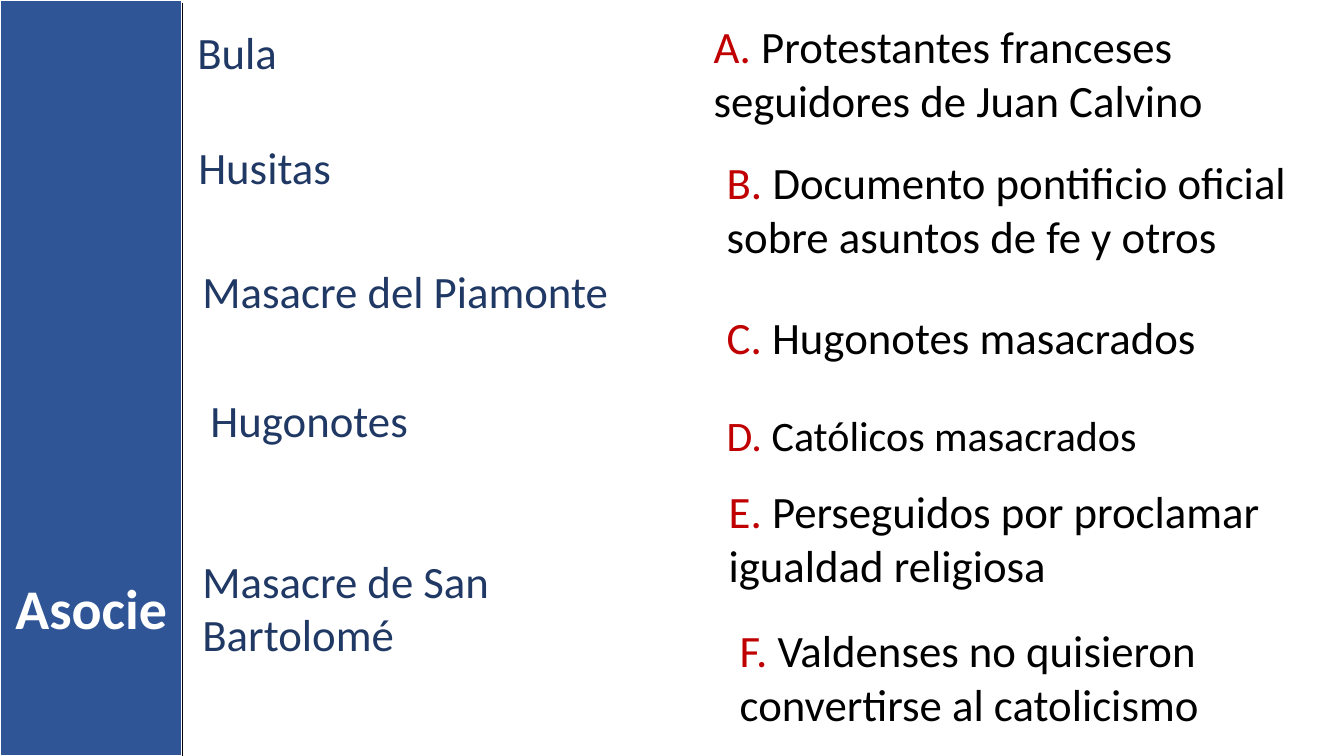
from typing import NamedTuple

from lxml.etree import SubElement
from pptx import Presentation
from pptx.dml.color import RGBColor as Rgb
from pptx.enum.shapes import MSO_CONNECTOR as Link, MSO_SHAPE as Form
from pptx.enum.text import MSO_ANCHOR as Anchor, MSO_AUTO_SIZE as Fit, PP_ALIGN as Align
from pptx.oxml.ns import qn
from pptx.slide import Slide
from pptx.text.text import TextFrame
from pptx.util import Pt

COLORS = {
    "band": "2F5597",
    "term": "203864",
    "mark": "C00000",
    "black": "000000",
    "white": "FFFFFF",
}
FONT = "Calibri"
WIDE, HIGH = 960, 540
BAND = 130.3


class Term(NamedTuple):
    text: str
    left: float
    top: float
    width: float
    height: float = 46


class Choice(NamedTuple):
    mark: str
    text: str
    left: float
    top: float
    width: float
    height: float = 85
    size: float = 32


TERMS = [
    Term("Bula", 133.9, 14.4, 368),
    Term("Husitas", 134.6, 96.5, 355.7),
    Term("Masacre del Piamonte", 137.5, 185, 367),
    Term("Hugonotes", 143.3, 277.2, 355.7),
    Term("Masacre de San Bartolomé", 137.5, 391.7, 343.4, 85),
]
CHOICES = [
    Choice("A. ", "Protestantes franceses seguidores de Juan Calvino", 502.6, 10.1, 417),
    Choice("B. ", "Documento pontificio oficial sobre asuntos de fe y otros", 512, 107.3, 440),
    Choice("C. ", "Hugonotes masacrados", 512, 217.4, 376.6, 46),
    Choice("D. ", "Católicos masacrados", 512, 288.7, 414.7, 44, 30),
    Choice("E. ", "Perseguidos por proclamar igualdad religiosa", 513.4, 342, 398.2),
    Choice("F. ", "Valdenses no quisieron convertirse al catolicismo", 521.3, 441.4, 357.8),
]


def rgb(name: str) -> Rgb:
    return Rgb.from_string(COLORS[name])


def write(frame: TextFrame, text: str, *, color: str, size: float = 32,
          bold: bool = False, align: Align = Align.LEFT) -> None:
    """Add a formatted run to the first paragraph of the frame."""
    frame.word_wrap = True
    frame.auto_size = Fit.SHAPE_TO_FIT_TEXT
    frame.vertical_anchor = Anchor.TOP
    para = frame.paragraphs[0]
    para.alignment = align
    run = para.add_run()
    run.text = text
    run.font.name = FONT
    run.font.size = Pt(size)
    run.font.bold = bold
    run.font.color.rgb = rgb(color)


def add_box(slide: Slide, item: Term | Choice) -> TextFrame:
    box = slide.shapes.add_textbox(
        Pt(item.left), Pt(item.top), Pt(item.width), Pt(item.height))
    return box.text_frame


def add_band(slide: Slide) -> None:
    band = slide.shapes.add_shape(Form.RECTANGLE, 0, 0, Pt(BAND), Pt(HIGH))
    band.shadow.inherit = False
    band.fill.solid()
    band.fill.fore_color.rgb = rgb("band")
    band.line.color.rgb = rgb("white")
    band.line.width = Pt(1.5)


def add_title(slide: Slide) -> None:
    """Place the title over the band, in front of it."""
    title = slide.shapes.title
    title.left, title.top = Pt(0), Pt(406.1)
    title.width, title.height = Pt(BAND), Pt(55.7)
    write(title.text_frame, "Asocie", color="white", size=40, bold=True, align=Align.CENTER)
    slide.shapes._spTree.append(title._element)


def add_edge(slide: Slide) -> None:
    edge = slide.shapes.add_connector(Link.STRAIGHT, Pt(BAND), Pt(2), Pt(BAND), Pt(HIGH))
    edge.line.color.rgb = rgb("black")
    edge.line.width = Pt(1)
    SubElement(edge._element.spPr, qn("a:effectLst"))


def main() -> None:
    deck = Presentation()
    deck.slide_width, deck.slide_height = Pt(WIDE), Pt(HIGH)
    slide = deck.slides.add_slide(deck.slide_layouts[5])
    add_band(slide)
    for term in TERMS:
        write(add_box(slide, term), term.text, color="term")
    for choice in CHOICES:
        frame = add_box(slide, choice)
        write(frame, choice.mark, color="mark", size=choice.size)
        write(frame, choice.text, color="black", size=choice.size)
    add_title(slide)
    add_edge(slide)
    deck.save("out.pptx")


if __name__ == "__main__":
    main()
